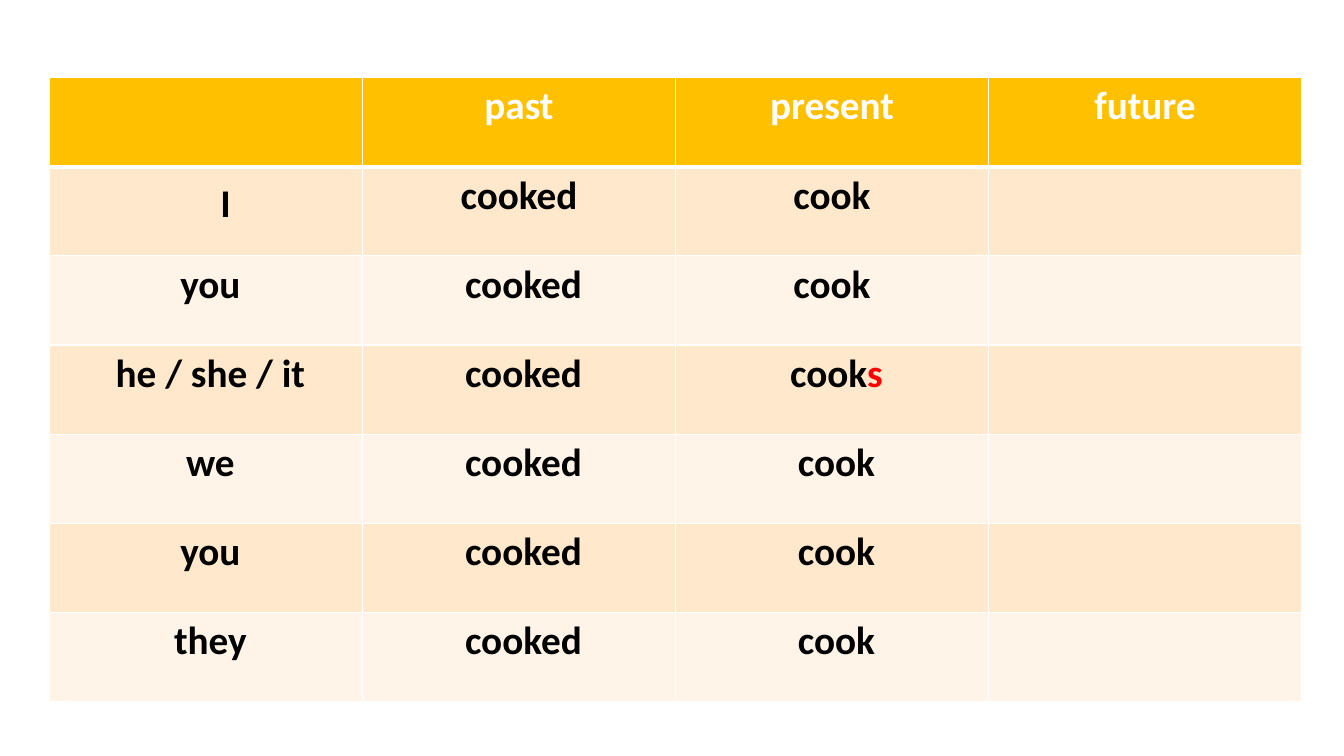
"""Builds a slide with a table of the past and present forms of "cook"."""
from dataclasses import dataclass

from lxml import etree
from pptx import Presentation
from pptx import util as u
from pptx.dml.color import RGBColor
from pptx.enum import text
from pptx.oxml.ns import qn
from pptx.table import _Cell

WHITE = RGBColor(0xFF, 0xFF, 0xFF)
BLACK = RGBColor(0x00, 0x00, 0x00)
RED = RGBColor(0xFF, 0x00, 0x00)
AMBER = RGBColor(0xFF, 0xC0, 0x00)
PEACH = RGBColor(0xFF, 0xE8, 0xCC)
CREAM = RGBColor(0xFF, 0xF4, 0xE7)

SLIDE_WIDTH, SLIDE_HEIGHT = u.Inches(13.33), u.Inches(7.5)
LEFT, TOP = u.Inches(0.49), u.Inches(0.77)
COLUMN_WIDTH, ROW_HEIGHT = u.Inches(12.42 / 4), u.Inches(6.19 / 7)
THIN, THICK = u.Pt(1), u.Pt(3)


@dataclass(frozen=True)
class Conjugation:
    """One row of the table, with an ending that stands out."""
    person: str
    past: str
    present: str
    ending: str = ""


HEADINGS = Conjugation("", "past", "present")
FUTURE = "future"
CONJUGATIONS = [
    Conjugation(" I", "cooked", "cook"),
    Conjugation(" you", " cooked", "cook"),
    Conjugation(" he / she / it", " cooked", " cook", "s"),
    Conjugation(" we", " cooked", " cook"),
    Conjugation(" you", " cooked", " cook"),
    Conjugation(" they", " cooked", " cook"),
]
IDEOGRAPHIC_SPACE = "　"


def add_borders(cell: _Cell, top: int, bottom: int) -> None:
    """Draw white lines on all four sides of a cell."""
    properties = cell._tc.get_or_add_tcPr()
    for side, width in (("L", THIN), ("R", THIN), ("T", top), ("B", bottom)):
        line = etree.SubElement(properties, qn(f"a:ln{side}"), w=str(int(width)))
        fill = etree.SubElement(line, qn("a:solidFill"))
        etree.SubElement(fill, qn("a:srgbClr"), val=str(WHITE))


def write_cell(cell: _Cell, runs: list[tuple[str, RGBColor]], fill: RGBColor) -> None:
    """Fill a cell and write its centred bold runs."""
    cell.fill.solid()
    cell.fill.fore_color.rgb = fill
    paragraph = cell.text_frame.paragraphs[0]
    paragraph.alignment = text.PP_ALIGN.CENTER
    for words, color in runs:
        if not words:
            continue
        run = paragraph.add_run()
        run.text = words
        run.font.name = "Calibri"
        run.font.size = u.Pt(28)
        run.font.bold = True
        run.font.color.rgb = color


def main() -> None:
    """Build and save the slide."""
    deck = Presentation()
    deck.slide_width, deck.slide_height = SLIDE_WIDTH, SLIDE_HEIGHT
    slide = deck.slides.add_slide(deck.slide_layouts[6])
    rows = [HEADINGS, *CONJUGATIONS]
    tenses = slide.shapes.add_table(
        len(rows), 4, LEFT, TOP, COLUMN_WIDTH * 4, ROW_HEIGHT * len(rows)).table
    for column in tenses.columns:
        column.width = COLUMN_WIDTH
    for index, entry in enumerate(rows):
        tenses.rows[index].height = ROW_HEIGHT
        heading = index == 0
        fill = AMBER if heading else (CREAM, PEACH)[index % 2]
        ink = WHITE if heading else BLACK
        person = entry.person
        if person.strip() == "I":
            person = IDEOGRAPHIC_SPACE + person.strip()
        contents = [
            [(person, ink)],
            [(entry.past, ink)],
            [(entry.present, ink), (entry.ending, RED)],
            [(FUTURE if heading else "", ink)],
        ]
        for cell, runs in zip(tenses.rows[index].cells, contents):
            add_borders(cell, THICK if index == 1 else THIN, THICK if heading else THIN)
            write_cell(cell, runs, fill)
    deck.save("out.pptx")


if __name__ == "__main__":
    main()
